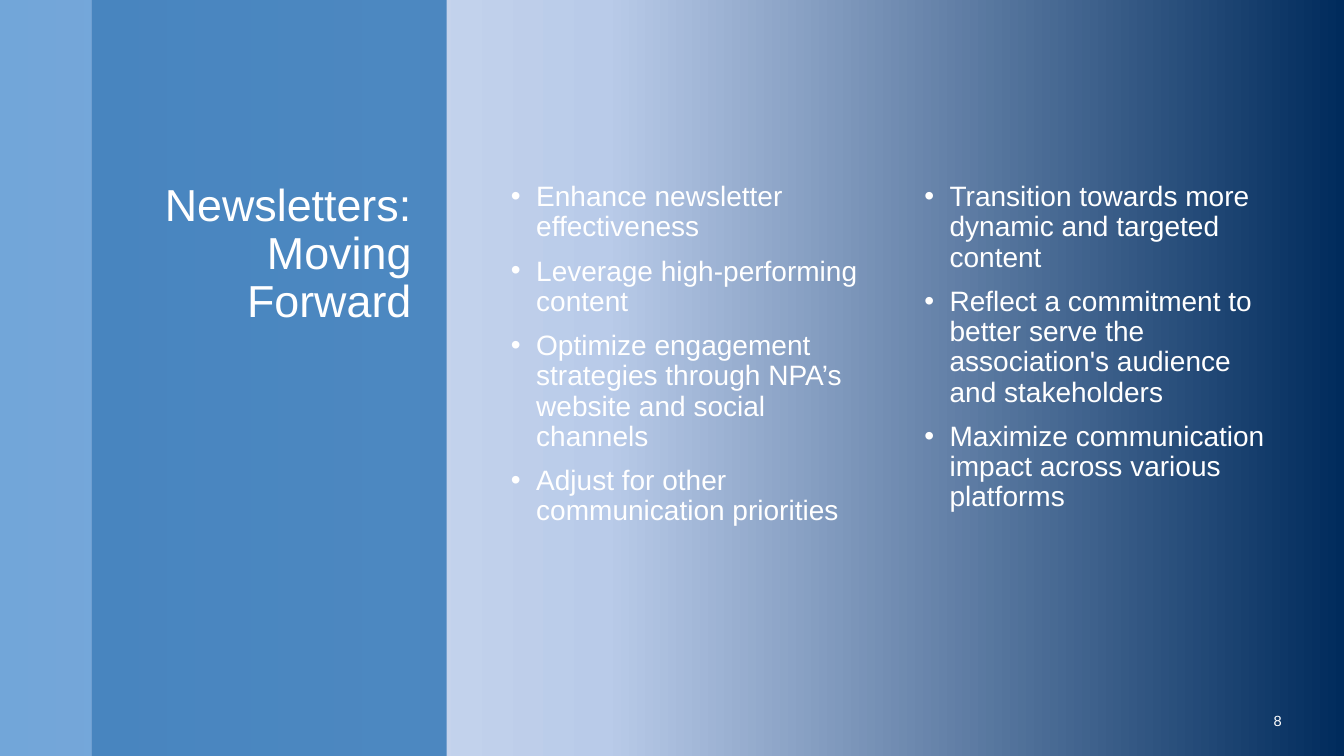
from lxml.etree import SubElement
from pptx import Presentation
from pptx.dml.color import RGBColor
from pptx.enum.shapes import MSO_SHAPE
from pptx.enum.text import MSO_ANCHOR, PP_ALIGN
from pptx.oxml.ns import qn
from pptx.util import Inches, Pt


def color(value):
    return RGBColor.from_string(value)


class SlideBuilder:
    font_name = "Arial"
    text_color = "FFFFFF"
    line_spacing = 0.9
    bullet_indent = Inches(0.25)

    def __init__(self, presentation):
        self.slide = presentation.slides.add_slide(presentation.slide_layouts[6])

    def add_background(self, stops, angle):
        fill = self.slide.background.fill
        fill.gradient()
        fill.gradient_angle = angle
        stop_list = next(self.slide.element.iter(qn("a:gsLst")))
        for stop in list(stop_list):
            stop_list.remove(stop)
        for position, value in stops:
            stop = SubElement(stop_list, qn("a:gs"), pos=str(position * 1000))
            SubElement(stop, qn("a:srgbClr"), val=value)

    def add_band(self, left, width, value, opacity):
        shape = self.slide.shapes.add_shape(
            MSO_SHAPE.RECTANGLE, Inches(left), 0, Inches(width), Inches(7.5)
        )
        shape.shadow.inherit = False
        shape.line.fill.background()
        shape.fill.solid()
        shape.fill.fore_color.rgb = color(value)
        fill_color = shape.element.spPr.find(qn("a:solidFill"))[0]
        SubElement(fill_color, qn("a:alpha"), val=str(opacity * 1000))

    def add_text_frame(self, left, top, width, height, anchor=MSO_ANCHOR.TOP):
        box = self.slide.shapes.add_textbox(
            Inches(left), Inches(top), Inches(width), Inches(height)
        )
        frame = box.text_frame
        frame.word_wrap = True
        frame.vertical_anchor = anchor
        return frame

    def style_paragraph(self, paragraph, size, alignment=PP_ALIGN.LEFT):
        paragraph.alignment = alignment
        paragraph.font.name = self.font_name
        paragraph.font.size = Pt(size)
        paragraph.font.color.rgb = color(self.text_color)

    def add_title(self, text, left, top, width, height):
        paragraph = self.add_text_frame(left, top, width, height).paragraphs[0]
        paragraph.text = text
        paragraph.line_spacing = self.line_spacing
        self.style_paragraph(paragraph, 32, PP_ALIGN.RIGHT)

    def add_bullets(self, items, left, top, width, height):
        frame = self.add_text_frame(left, top, width, height)
        for index, item in enumerate(items):
            paragraph = frame.add_paragraph() if index else frame.paragraphs[0]
            paragraph.text = item
            paragraph.line_spacing = self.line_spacing
            paragraph.space_before = Pt(10 if index else 0)
            properties = paragraph._p.get_or_add_pPr()
            properties.set("marL", str(self.bullet_indent))
            properties.set("indent", str(-self.bullet_indent))
            SubElement(properties, qn("a:buFont"), typeface=self.font_name)
            SubElement(properties, qn("a:buChar"), char="•")
            self.style_paragraph(paragraph, 20)

    def add_slide_number(self, number, left, top, width, height):
        frame = self.add_text_frame(left, top, width, height, MSO_ANCHOR.MIDDLE)
        paragraph = frame.paragraphs[0]
        paragraph.text = str(number)
        paragraph.space_after = Pt(6)
        self.style_paragraph(paragraph, 10.5, PP_ALIGN.RIGHT)


BACKGROUND_STOPS = [
    (0, "03416F"),
    (0, "002B5C"),
    (55, "B9CBE9"),
    (71, "C7D5ED"),
    (100, "ABC0E4"),
]
COLUMNS = [
    [
        "Enhance newsletter effectiveness",
        "Leverage high-performing content",
        "Optimize engagement strategies through NPA’s website and social channels",
        "Adjust for other communication priorities",
    ],
    [
        "Transition towards more dynamic and targeted content",
        "Reflect a commitment to better serve the association's audience and stakeholders",
        "Maximize communication impact across various platforms",
    ],
]
CONTENT_TOP = 1.76
CONTENT_HEIGHT = 4.92


def main():
    presentation = Presentation()
    presentation.slide_width = Inches(13.33)
    presentation.slide_height = Inches(7.5)

    builder = SlideBuilder(presentation)
    builder.add_background(BACKGROUND_STOPS, 180)
    builder.add_band(0, 0.91, "5B9BD5", 70)
    builder.add_band(0.91, 3.52, "2E75B6", 80)
    builder.add_title(
        "Newsletters: Moving Forward", 1.09, CONTENT_TOP, 3.09, CONTENT_HEIGHT
    )
    for index, items in enumerate(COLUMNS):
        left = 4.97 + index * 4.1
        builder.add_bullets(items, left, CONTENT_TOP, 3.74, CONTENT_HEIGHT)
    builder.add_slide_number(8, 11.32, 6.95, 1.49, 0.4)

    presentation.save("out.pptx")


if __name__ == "__main__":
    main()
